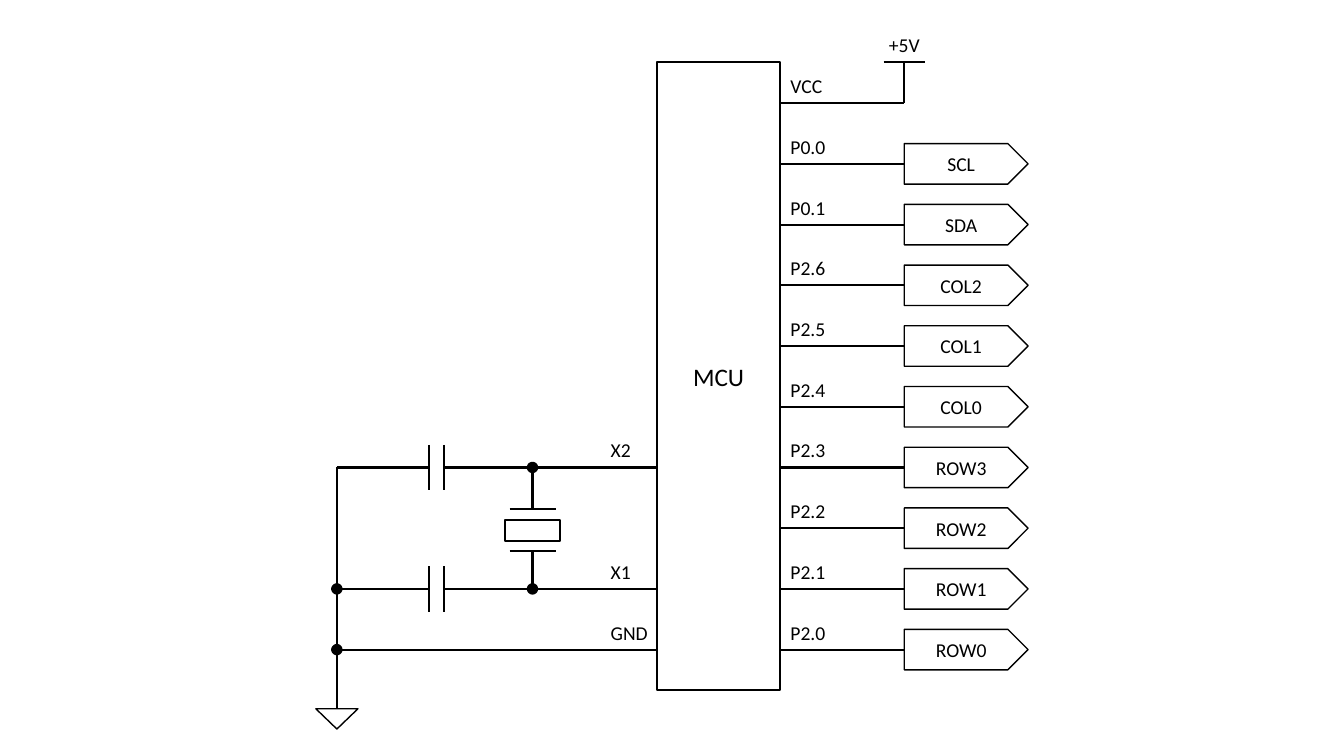
import pptx
import pptx.dml.color
import pptx.enum.shapes
import pptx.enum.text
import pptx.util
from pptx.oxml.ns import qn
from pptx.util import Cm

BLACK = pptx.dml.color.RGBColor(0, 0, 0)
FONT = "Calibri"
SHAPES = pptx.enum.shapes.MSO_SHAPE

# Lengths in centimetres
ROW_TOP, ROW_PITCH = 2.6, 1.53
CHIP_LEFT, CHIP_TOP, CHIP_WIDTH, CHIP_HEIGHT = 16.55, 1.57, 3.12, 15.82
CHIP_RIGHT = CHIP_LEFT + CHIP_WIDTH
PORT_LEFT, PORT_WIDTH, PORT_HEIGHT = 22.79, 3.12, 1.02
LABEL_HEIGHT = 0.86
LEFT_LABEL_X = 15.14
GROUND_X, GROUND_TOP = 8.49, 17.86
CRYSTAL_X, CRYSTAL_Y, CRYSTAL_GAP = 13.42, 13.36, 0.53
PLATE_XS, PLATE_HALF = (10.82, 11.18), 0.57

PORTS = [("P0.0", "SCL"), ("P0.1", "SDA"), ("P2.6", "COL2"),
         ("P2.5", "COL1"), ("P2.4", "COL0"), ("P2.3", "ROW3"),
         ("P2.2", "ROW2"), ("P2.1", "ROW1"), ("P2.0", "ROW0")]
X2_ROW, X1_ROW, GND_ROW = 6, 8, 9


def row_y(row):
    return ROW_TOP + row * ROW_PITCH


def add_run(paragraph, text, size):
    run = paragraph.add_run()
    run.text = text
    run.font.name = FONT
    run.font.size = pptx.util.Pt(size)
    run.font.color.rgb = BLACK


def add_outline(slide, kind, left, top, width, height, weight, text="", size=14):
    shape = slide.shapes.add_shape(kind, Cm(left), Cm(top), Cm(width), Cm(height))
    shape.shadow.inherit = False
    shape.fill.background()
    shape.line.color.rgb = BLACK
    shape.line.width = pptx.util.Pt(weight)
    if text:
        shape.text_frame.vertical_anchor = pptx.enum.text.MSO_ANCHOR.MIDDLE
        paragraph = shape.text_frame.paragraphs[0]
        paragraph.alignment = pptx.enum.text.PP_ALIGN.CENTER
        add_run(paragraph, text, size)
    return shape


def add_wire(slide, start_x, start_y, end_x, end_y):
    wire = slide.shapes.add_connector(
        pptx.enum.shapes.MSO_CONNECTOR.STRAIGHT,
        Cm(start_x), Cm(start_y), Cm(end_x), Cm(end_y))
    wire.line.color.rgb = BLACK
    wire.line.width = pptx.util.Pt(1.5)
    properties = wire.element.spPr
    properties.append(properties.makeelement(qn("a:effectLst"), {}))
    return wire


def add_label(slide, text, left, bottom, width):
    box = slide.shapes.add_textbox(
        Cm(left), Cm(bottom - LABEL_HEIGHT), Cm(width), Cm(LABEL_HEIGHT))
    box.text_frame.word_wrap = False
    box.text_frame.auto_size = pptx.enum.text.MSO_AUTO_SIZE.SHAPE_TO_FIT_TEXT
    add_run(box.text_frame.paragraphs[0], text, 14)


def add_junction(slide, x, y):
    size = 0.13
    dot = add_outline(slide, SHAPES.OVAL, x - size / 2, y - size / 2, size, size, 4.5)
    dot.fill.solid()
    dot.fill.fore_color.rgb = BLACK


def add_port(slide, row, pin, signal):
    y = row_y(row)
    port = add_outline(slide, SHAPES.PENTAGON, PORT_LEFT, y - PORT_HEIGHT / 2,
                       PORT_WIDTH, PORT_HEIGHT, 1, signal)
    port.adjustments[0] = 0.5
    wire = add_wire(slide, CHIP_RIGHT, y, PORT_LEFT, y)
    wire.end_connect(port, 1)
    add_label(slide, pin, CHIP_RIGHT, y, 1.4)


def add_supply(slide):
    y = row_y(0)
    add_wire(slide, CHIP_RIGHT, y, PORT_LEFT, y)
    add_label(slide, "VCC", CHIP_RIGHT, y, 1.32)
    add_wire(slide, PORT_LEFT, CHIP_TOP, PORT_LEFT, y)
    add_wire(slide, PORT_LEFT - 0.52, CHIP_TOP, PORT_LEFT + 0.52, CHIP_TOP)
    add_label(slide, "+5V", 22.15, CHIP_TOP, 1.3)


def add_capacitor_line(slide, row, pin):
    y = row_y(row)
    add_wire(slide, GROUND_X, y, PLATE_XS[0], y)
    add_wire(slide, PLATE_XS[1], y, CHIP_LEFT, y)
    for x in PLATE_XS:
        add_wire(slide, x, y - PLATE_HALF, x, y + PLATE_HALF)
    add_label(slide, pin, LEFT_LABEL_X, y, 1.02)
    add_junction(slide, CRYSTAL_X, y)


def add_crystal(slide):
    width, height = 1.4, 0.53
    add_outline(slide, SHAPES.RECTANGLE, CRYSTAL_X - width / 2,
                CRYSTAL_Y - height / 2, width, height, 1.5)
    for row, side in ((X2_ROW, -1), (X1_ROW, 1)):
        plate_y = CRYSTAL_Y + side * CRYSTAL_GAP
        add_wire(slide, CRYSTAL_X - 0.58, plate_y, CRYSTAL_X + 0.58, plate_y)
        add_wire(slide, CRYSTAL_X, row_y(row), CRYSTAL_X, plate_y)


def add_ground(slide):
    y = row_y(GND_ROW)
    add_wire(slide, CHIP_LEFT, y, GROUND_X, y)
    add_label(slide, "GND", LEFT_LABEL_X, y, 1.45)
    add_wire(slide, GROUND_X, row_y(X2_ROW), GROUND_X, GROUND_TOP)
    triangle = add_outline(slide, SHAPES.ISOSCELES_TRIANGLE,
                           GROUND_X - 0.53, GROUND_TOP, 1.06, 0.51, 1)
    triangle.rotation = 180
    for row in (X1_ROW, GND_ROW):
        add_junction(slide, GROUND_X, row_y(row))


def main():
    presentation = pptx.Presentation()
    presentation.slide_width = Cm(33.87)
    presentation.slide_height = Cm(19.05)
    slide = presentation.slides.add_slide(presentation.slide_layouts[6])

    # Microcontroller
    add_outline(slide, SHAPES.RECTANGLE, CHIP_LEFT, CHIP_TOP,
                CHIP_WIDTH, CHIP_HEIGHT, 1.5, "MCU", 18)

    # Right side: supply and ports
    add_supply(slide)
    for row, (pin, signal) in enumerate(PORTS, start=1):
        add_port(slide, row, pin, signal)

    # Left side: oscillator and ground
    add_capacitor_line(slide, X2_ROW, "X2")
    add_capacitor_line(slide, X1_ROW, "X1")
    add_crystal(slide)
    add_ground(slide)

    presentation.save("out.pptx")


if __name__ == "__main__":
    main()
